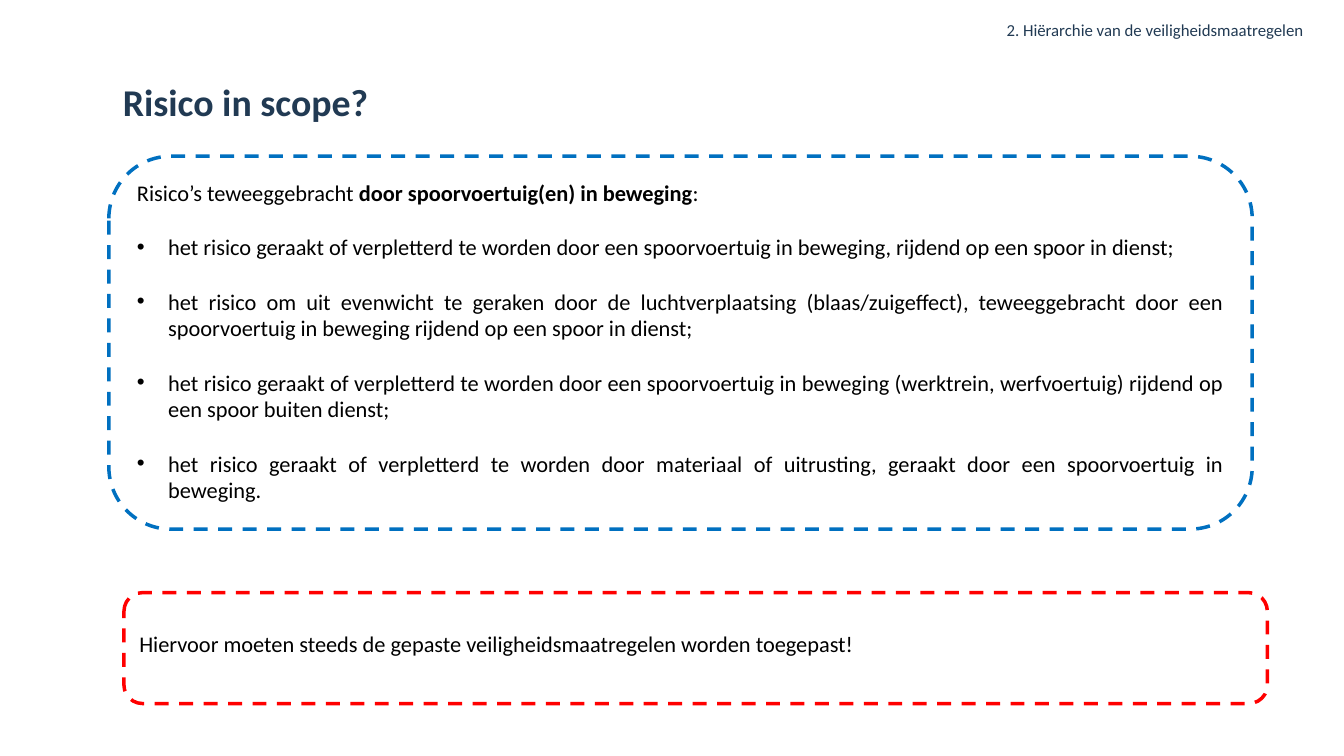
from pptx import Presentation
from pptx.dml.color import RGBColor
from pptx.enum.dml import MSO_LINE
from pptx.enum.shapes import MSO_SHAPE
from pptx.enum.text import MSO_ANCHOR, PP_ALIGN
from pptx.oxml.ns import qn
from pptx.util import Inches, Pt
from lxml import etree

# Content: paragraphs are lists of (text, bold) runs
TITLE = [("Risico in scope?", True)]
CHAPTER = [("2. Hiërarchie van de veiligheidsmaatregelen", False)]
INTRO = [
    ("Risico’s teweeggebracht ", False),
    ("door spoorvoertuig(en) in beweging", True),
    (":", False),
]
RISKS = [
    "het risico geraakt of verpletterd te worden door een spoorvoertuig in beweging, "
    "rijdend op een spoor in dienst;",
    "het risico om uit evenwicht te geraken door de luchtverplaatsing (blaas/zuigeffect), "
    "teweeggebracht door een spoorvoertuig in beweging rijdend op een spoor in dienst;",
    "het risico geraakt of verpletterd te worden door een spoorvoertuig in beweging "
    "(werktrein, werfvoertuig) rijdend op een spoor buiten dienst;",
    "het risico geraakt of verpletterd te worden door materiaal of uitrusting, "
    "geraakt door een spoorvoertuig in beweging.",
]
CONCLUSION = [("Hiervoor moeten steeds de gepaste veiligheidsmaatregelen worden toegepast!", False)]

NAVY = RGBColor(0x21, 0x3A, 0x53)
BLACK = RGBColor(0x00, 0x00, 0x00)
BLUE = RGBColor(0x00, 0x70, 0xC0)
RED = RGBColor(0xFF, 0x00, 0x00)

# Layout in inches
FONT = "Calibri"
BODY_SIZE = 16
LINE = 19.5  # height of one body line, in points
INDENT = 0.31
BOX_W = 11.34


def add_runs(p, runs, size, color, align):
    p.alignment = align
    for text, bold in runs:
        r = p.add_run()
        r.text = text
        r.font.name, r.font.size, r.font.bold = FONT, Pt(size), bold
        r.font.color.rgb = color


def add_label(s, area, runs, size, align, anchor):
    tf = s.shapes.add_textbox(*map(Inches, area)).text_frame
    tf.word_wrap = True
    tf.vertical_anchor = anchor
    p = tf.paragraphs[0]
    p.line_spacing = 0.9
    add_runs(p, runs, size, NAVY, align)


def add_dashed_box(s, left, top, height, color):
    sp = s.shapes.add_shape(MSO_SHAPE.ROUNDED_RECTANGLE,
                            *map(Inches, (left, top, BOX_W, height)))
    sp.shadow.inherit = False
    sp.fill.background()
    sp.line.color.rgb = color
    sp.line.width = Pt(2.5)
    sp.line.dash_style = MSO_LINE.DASH
    tf = sp.text_frame
    tf.word_wrap = True
    tf.vertical_anchor = MSO_ANCHOR.TOP
    return tf


def add_bullet(p):
    pPr = p._p.get_or_add_pPr()
    pPr.set("marL", str(Inches(INDENT)))
    pPr.set("indent", str(-Inches(INDENT)))
    etree.SubElement(pPr, qn("a:buFont"), typeface="Arial")
    etree.SubElement(pPr, qn("a:buChar"), char="•")


prs = Presentation()
prs.slide_width, prs.slide_height = Inches(13.33), Inches(7.5)
s = prs.slides.add_slide(prs.slide_layouts[6])

# Title and chapter name
add_label(s, (1.12, 0.77, 10.45, 0.52), TITLE, 27, PP_ALIGN.LEFT, MSO_ANCHOR.MIDDLE)
add_label(s, (9.2, 0.17, 3.83, 0.39), CHAPTER, 12, PP_ALIGN.RIGHT, MSO_ANCHOR.TOP)

# Risks in scope
tf = add_dashed_box(s, 1.08, 1.55, 3.7, BLUE)
add_runs(tf.paragraphs[0], INTRO, BODY_SIZE, BLACK, PP_ALIGN.JUSTIFY)
for risk in RISKS:
    p = tf.add_paragraph()
    add_bullet(p)
    p.space_before = Pt(LINE)
    add_runs(p, [(risk, False)], BODY_SIZE, BLACK, PP_ALIGN.JUSTIFY)

# Conclusion, one line below the top of its box
tf = add_dashed_box(s, 1.23, 5.88, 1.1, RED)
tf.margin_top = Inches(0.05) + Pt(LINE)
add_runs(tf.paragraphs[0], CONCLUSION, BODY_SIZE, BLACK, PP_ALIGN.JUSTIFY)

prs.save("out.pptx")
